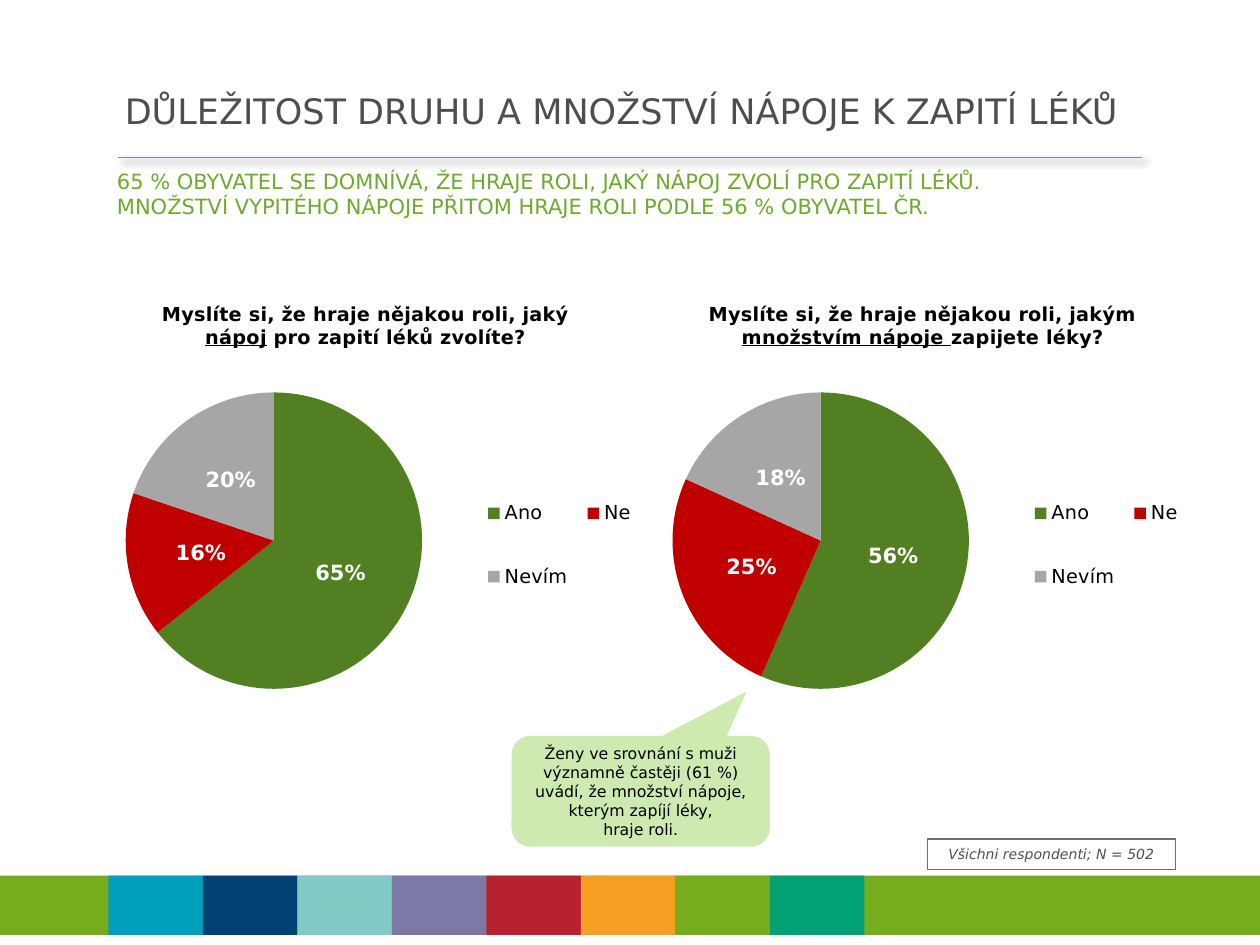
from lxml import etree
from pptx import Presentation
from pptx.chart.data import CategoryChartData as ChartData
from pptx.dml.color import RGBColor
from pptx.enum.chart import XL_CHART_TYPE as ChartType
from pptx.enum.chart import XL_LABEL_POSITION as LabelPosition
from pptx.enum.chart import XL_LEGEND_POSITION as LegendPosition
from pptx.enum.shapes import MSO_CONNECTOR as Connector
from pptx.enum.shapes import MSO_SHAPE as Shape
from pptx.enum.text import MSO_ANCHOR as Anchor
from pptx.enum.text import PP_ALIGN as Align
from pptx.oxml import parse_xml
from pptx.oxml.ns import nsdecls, qn
from pptx.util import Inches, Pt

BLACK = RGBColor(0x00, 0x00, 0x00)
WHITE = RGBColor(0xFF, 0xFF, 0xFF)
DARK_GREY = RGBColor(0x4E, 0x4E, 0x4E)
MID_GREY = RGBColor(0x6E, 0x6E, 0x6E)
LIGHT_GREY = RGBColor(0xA6, 0xA6, 0xA6)
LEAF = RGBColor(0x77, 0xAD, 0x1C)
TEXT_GREEN = RGBColor(0x6E, 0xAA, 0x2E)
PALE_GREEN = RGBColor(0xCE, 0xEA, 0xB0)
DARK_GREEN = RGBColor(0x52, 0x7F, 0x22)
RED = RGBColor(0xC0, 0x00, 0x00)
CYAN = RGBColor(0x00, 0x9F, 0xBB)
NAVY = RGBColor(0x00, 0x42, 0x72)
AQUA = RGBColor(0x83, 0xC9, 0xC6)
VIOLET = RGBColor(0x7C, 0x78, 0xA8)
CRIMSON = RGBColor(0xB9, 0x20, 0x32)
ORANGE = RGBColor(0xF4, 0x9F, 0x22)
TEAL = RGBColor(0x00, 0xA2, 0x75)

ANSWERS = {"Ano": DARK_GREEN, "Ne": RED, "Nevím": LIGHT_GREY}
STRIPES = [CYAN, NAVY, AQUA, VIOLET, CRIMSON, ORANGE, LEAF, TEAL]

LINE_SHADOW = (
    f'<a:effectLst {nsdecls("a")}><a:outerShdw blurRad="50800" dist="38100" '
    'dir="2700000"><a:srgbClr val="000000"><a:alpha val="40000"/></a:srgbClr>'
    "</a:outerShdw></a:effectLst>"
)


def place_chart_part(part, inner=False, **fractions):
    """Give a chart title, legend or plot area a manual layout."""
    for old in part.findall(qn("c:layout")):
        part.remove(old)
    layout = etree.Element(qn("c:layout"))
    manual = etree.SubElement(layout, qn("c:manualLayout"))
    settings = {"layoutTarget": "inner"} if inner else {}
    settings |= {"xMode": "edge", "yMode": "edge"} | fractions
    for name, value in settings.items():
        etree.SubElement(manual, qn(f"c:{name}")).set("val", str(value))
    overlay = part.find(qn("c:overlay"))
    if overlay is None:
        part.insert(0, layout)
    else:
        overlay.addprevious(layout)


class SlideBuilder:
    font_name = "DejaVu Sans"

    def __init__(self, page):
        self.page = page

    def style_font(self, font, color, **values):
        for name, value in ({"name": self.font_name} | values).items():
            setattr(font, name, value)
        font.color.rgb = color

    def fill_text(self, frame, lines, color, align=Align.LEFT, **values):
        """Fill a text frame with one paragraph, broken into the given lines."""
        frame.word_wrap = True
        para = frame.paragraphs[0]
        para.alignment = align
        para.space_before = Pt(0)
        self.style_font(para.font, color, **values)
        for index, line in enumerate(lines):
            if index:
                para.add_line_break()
            span = para.add_run()
            span.text = line
            self.style_font(span.font, color, **values)

    def title(self, text, left, top, width, height):
        box = self.page.shapes.title
        places = {"left": left, "top": top, "width": width, "height": height}
        for name, value in places.items():
            setattr(box, name, Inches(value))
        box.text_frame.vertical_anchor = Anchor.MIDDLE
        self.fill_text(box.text_frame, [text], DARK_GREY, size=Pt(20))

    def text(self, lines, place, color, **values):
        box = self.page.shapes.add_textbox(*map(Inches, place))
        self.fill_text(box.text_frame, lines, color, **values)

    def shape(self, kind, place, fill=None, line=None):
        shape = self.page.shapes.add_shape(kind, *map(Inches, place))
        shape.shadow.inherit = False
        if fill is None:
            shape.fill.background()
        else:
            shape.fill.solid()
            shape.fill.fore_color.rgb = fill
        if line is None:
            shape.line.fill.background()
        else:
            shape.line.color.rgb = line
            shape.line.width = Pt(0.75)
        return shape

    def rule(self, left, right, top):
        ends = map(Inches, (left, top, right, top))
        rule = self.page.shapes.add_connector(Connector.STRAIGHT, *ends)
        rule.line.color.rgb = LEAF
        rule.line.width = Pt(0.75)
        rule.element.spPr.append(parse_xml(LINE_SHADOW))

    def pie(self, question, values, left):
        """Add a pie; question is a list of (text, underlined) pairs."""
        data = ChartData(number_format="0%")
        data.categories = list(ANSWERS)
        data.add_series("Series 1", values)
        place = map(Inches, (left, 2.25, 4.49, 3.46))
        chart = self.page.shapes.add_chart(ChartType.PIE, *place, data).chart
        self.style_font(chart.font, BLACK, size=Pt(18))

        para = chart.chart_title.text_frame.paragraphs[0]
        for text, underlined in question:
            span = para.add_run()
            span.text = text
            self.style_font(span.font, BLACK, size=Pt(11), bold=True,
                            underline=underlined)

        chart.has_legend = True
        chart.legend.position = LegendPosition.LEFT
        chart.legend.include_in_layout = False
        self.style_font(chart.legend.font, BLACK, size=Pt(11))

        plot = chart.plots[0]
        plot.vary_by_categories = True
        for index, color in enumerate(ANSWERS.values()):
            fill = plot.series[0].points[index].format.fill
            fill.solid()
            fill.fore_color.rgb = color
        plot.has_data_labels = True
        labels = plot.data_labels
        formats = {"show_value": True, "show_percentage": False,
                   "number_format": "0%", "number_format_is_linked": False,
                   "position": LabelPosition.CENTER}
        for name, value in formats.items():
            setattr(labels, name, value)
        self.style_font(labels.font, WHITE, size=Pt(12), bold=True)

        root = chart.element.find(qn("c:chart"))
        place_chart_part(root.find(qn("c:title")), x=0.13, y=0.03)
        place_chart_part(root.find(qn("c:legend")), x=0.69, y=0.41, w=0.3, h=0.38)
        place_chart_part(root.find(qn("c:plotArea")), inner=True,
                         x=0.07, y=0.25, w=0.53, h=0.68)


def main():
    deck = Presentation()
    deck.slide_width, deck.slide_height = Inches(10), Inches(7.5)
    slide = SlideBuilder(deck.slides.add_slide(deck.slide_layouts[5]))

    slide.rule(0.94, 9.06, 1.25)
    slide.shape(Shape.RECTANGLE, (0, 6.95, 10, 0.47), LEAF)
    for index, color in enumerate(STRIPES):
        slide.shape(Shape.RECTANGLE, (0.86 + 0.75 * index, 6.95, 0.75, 0.47), color)

    slide.title("DŮLEŽITOST DRUHU A MNOŽSTVÍ NÁPOJE K ZAPITÍ LÉKŮ",
                0.89, 0.62, 8.87, 0.51)
    slide.text(["65 % OBYVATEL SE DOMNÍVÁ, ŽE HRAJE ROLI, JAKÝ NÁPOJ ZVOLÍ PRO ZAPITÍ LÉKŮ.",
                "MNOŽSTVÍ VYPITÉHO NÁPOJE PŘITOM HRAJE ROLI PODLE 56 % OBYVATEL ČR."],
               (0.83, 1.29, 8.82, 0.55), TEXT_GREEN, size=Pt(12))

    slide.pie([("Myslíte si, že hraje nějakou roli, jaký ", False), ("nápoj", True),
               (" pro zapití léků zvolíte?", False)], (0.65, 0.16, 0.2), 0.67)
    note = slide.shape(Shape.RECTANGLE, (7.36, 6.66, 1.97, 0.24), line=MID_GREY)
    slide.fill_text(note.text_frame, ["Všichni respondenti; N = 502"], DARK_GREY,
                    Align.CENTER, size=Pt(8), italic=True)
    slide.pie([("Myslíte si, že hraje nějakou roli, jakým ", False),
               ("množstvím nápoje ", True), ("zapijete léky?", False)],
              (0.56, 0.25, 0.18), 5.01)

    callout = slide.shape(Shape.ROUNDED_RECTANGULAR_CALLOUT,
                          (4.06, 5.84, 2.05, 0.88), PALE_GREEN)
    for index, value in enumerate((0.41, -0.9, 0.17)):
        callout.adjustments[index] = value
    slide.fill_text(callout.text_frame,
                    ["Ženy ve srovnání s muži významně častěji (61 %) uvádí, "
                     "že množství nápoje, kterým zapíjí léky,", "hraje roli."],
                    BLACK, Align.CENTER, size=Pt(9))

    deck.save("out.pptx")


if __name__ == "__main__":
    main()
